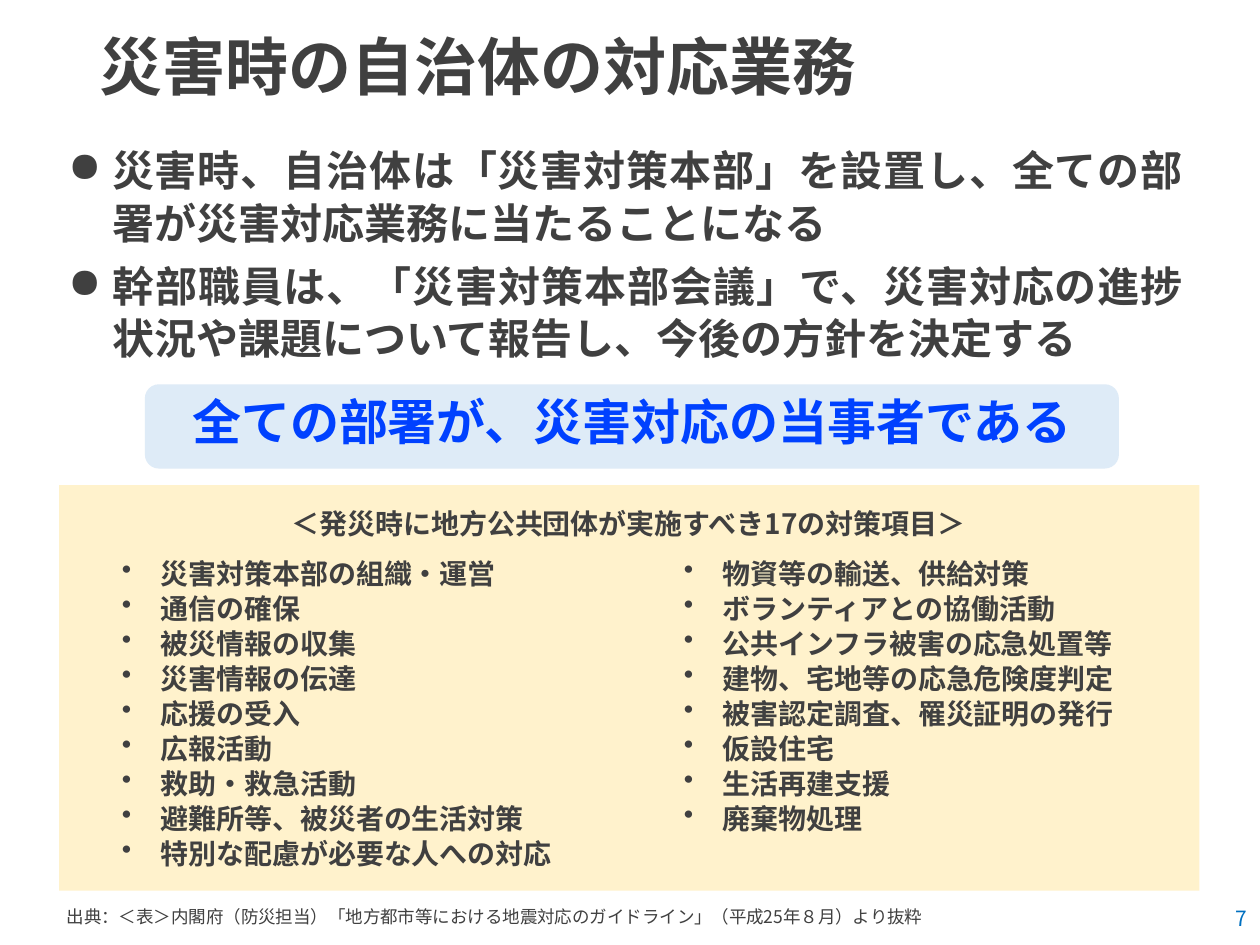
from dataclasses import dataclass
from pptx import Presentation
from pptx.dml.color import RGBColor as Rgb
from pptx.enum.shapes import MSO_SHAPE as Shape
from pptx.enum.text import MSO_ANCHOR as Anchor, PP_ALIGN as Align
from pptx.oxml.ns import qn
from pptx.util import Pt
from lxml.etree import SubElement as Sub


@dataclass(frozen=True)
class Theme:
    """Colours, type sizes and font of the slide."""
    font: str = "Noto Sans CJK JP"
    ink: str = "404040"
    page: str = "0070C0"
    claim: str = "0041FF"
    band: str = "DEEBF7"
    panel: str = "FFF2CC"
    head: int = 36
    key: int = 28
    body: int = 24
    item: int = 16
    num: int = 12
    note: int = 10


T = Theme()

POINTS = [
    "災害時、自治体は「災害対策本部」を設置し、全ての部署が災害対応業務に当たることになる",
    "幹部職員は、「災害対策本部会議」で、災害対応の進捗状況や課題について報告し、今後の方針を決定する",
]
TASKS = [
    ["災害対策本部の組織・運営", "通信の確保", "被災情報の収集", "災害情報の伝達", "応援の受入",
     "広報活動", "救助・救急活動", "避難所等、被災者の生活対策", "特別な配慮が必要な人への対応"],
    ["物資等の輸送、供給対策", "ボランティアとの協働活動", "公共インフラ被害の応急処置等",
     "建物、宅地等の応急危険度判定", "被害認定調査、罹災証明の発行", "仮設住宅", "生活再建支援",
     "廃棄物処理"],
]


def apply(obj, vals):
    """Set each named value on an object."""
    for name, val in vals.items():
        setattr(obj, name, val)


def write(shape, lines, size, color=T.ink, bold=True, frame=None, para=None, mark=None):
    """Fill a shape with styled lines; mark is (character, indent in points)."""
    text = shape.text_frame
    apply(text, {"word_wrap": True, **(frame or {})})
    for i, line in enumerate(lines):
        p = text.paragraphs[0] if i == 0 else text.add_paragraph()
        apply(p, para or {})
        run = p.add_run()
        run.text = line
        apply(run.font, {"size": Pt(size), "bold": bold, "name": T.font})
        run.font.color.rgb = Rgb.from_string(color)
        Sub(run.font._element, qn("a:ea"), typeface=T.font)
        if mark:
            char, left, hang = mark
            props = p._p.get_or_add_pPr()
            props.set("marL", str(Pt(left)))
            props.set("indent", str(-Pt(hang)))
            Sub(props, qn("a:buChar"), char=char)


def label(slide, box, *args, **opts):
    """Place a text box in the given box."""
    write(slide.shapes.add_textbox(*map(Pt, box)), *args, **opts)


def block(slide, box, kind, color):
    """Place a plain filled shape and return it."""
    shape = slide.shapes.add_shape(kind, *map(Pt, box))
    shape.shadow.inherit = False
    shape.fill.solid()
    shape.fill.fore_color.rgb = Rgb.from_string(color)
    shape.line.fill.background()
    return shape


def title(slide, box):
    """Place the slide title."""
    label(slide, box, ["災害時の自治体の対応業務"], T.head,
          frame={"vertical_anchor": Anchor.MIDDLE}, para={"line_spacing": 0.9})


def points(slide, box):
    """Place the main bullet points."""
    label(slide, box, POINTS, T.body, mark=("●", 39.6, 25.2),
          frame={"margin_left": 0, "margin_top": 0, "margin_right": 0, "margin_bottom": Pt(8.6)},
          para={"alignment": Align.JUSTIFY, "line_spacing": Pt(30), "space_after": Pt(6)})


def claim(slide, box):
    """Place the key message on its band."""
    band = block(slide, box, Shape.FLOWCHART_ALTERNATE_PROCESS, T.band)
    write(band, ["全ての部署が、災害対応の当事者である"], T.key, T.claim,
          frame={"vertical_anchor": Anchor.MIDDLE, "margin_top": 0, "margin_bottom": Pt(5.8)},
          para={"alignment": Align.CENTER})


def panel(slide, box):
    """Place the panel with its heading and two columns of tasks."""
    x, y, w, h = box
    block(slide, box, Shape.RECTANGLE, T.panel)
    label(slide, (x + 75.6, y + 8.6, w - 152, 26.6),
          ["＜発災時に地方公共団体が実施すべき17の対策項目＞"], T.item,
          para={"alignment": Align.CENTER})
    step = 20
    rows = max(map(len, TASKS))
    for i, tasks in enumerate(TASKS):
        spare = step * (rows - len(tasks))
        label(slide, (x + 28.8 + i * 321.1, y + 58.3, 306.7, 143.3), tasks, T.item,
              mark=("•", 22.3, 22.3), para={"line_spacing": Pt(step)},
              frame={"vertical_anchor": Anchor.MIDDLE, "margin_bottom": Pt(3.6 + spare)})


def foot(slide, box):
    """Place the source note and the page number."""
    x, y, w, h = box
    label(slide, (x, y, w - 13, h),
          ["出典：＜表＞内閣府（防災担当）「地方都市等における地震対応のガイドライン」（平成25年８月）より抜粋"],
          T.note, bold=False, frame={"margin_left": Pt(17.2)})
    label(slide, (x + w - 162, y - 3.6, 162, 28.8), ["7"], T.num, T.page, bold=False,
          frame={"vertical_anchor": Anchor.MIDDLE}, para={"alignment": Align.RIGHT})


def main():
    """Build and save the slide."""
    deck = Presentation()
    apply(deck, {"slide_width": Pt(720), "slide_height": Pt(540)})
    slide = deck.slides.add_slide(deck.slide_layouts[6])
    title(slide, (49.7, 16.6, 620.6, 47.5))
    points(slide, (24.5, 81.4, 651.6, 141.1))
    claim(slide, (82.8, 219.6, 556.6, 48.2))
    panel(slide, (33.8, 277.2, 651.6, 231.8))
    foot(slide, (20.9, 514.1, 699.1, 26.6))
    deck.save("out.pptx")


if __name__ == "__main__":
    main()
